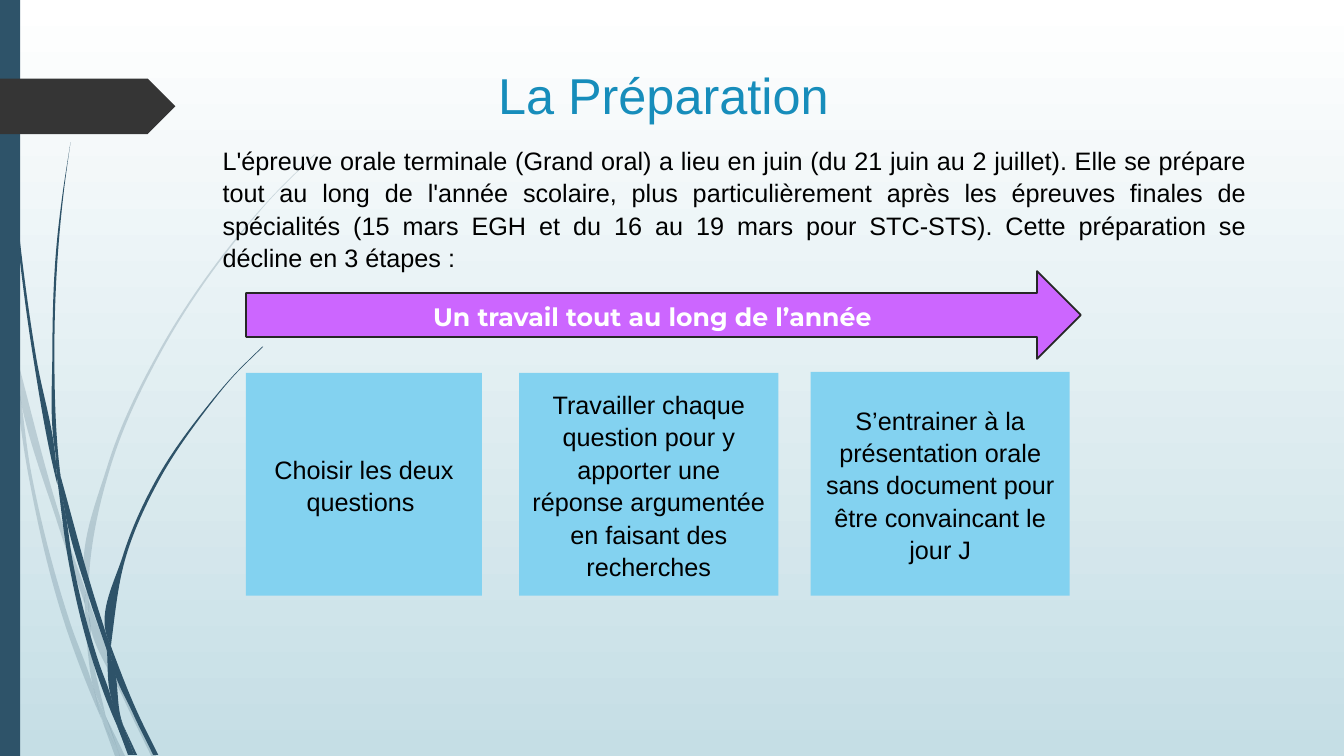
import math

from pptx import Presentation
from pptx import util as u
from pptx.dml.color import RGBColor
from pptx.enum import shapes, text
from pptx.oxml import ns
from lxml import etree

NAVY = RGBColor(0x2E, 0x53, 0x69)
CHARCOAL = RGBColor(0x35, 0x35, 0x35)
OUTLINE = RGBColor(0x27, 0x27, 0x27)
TITLE_BLUE = RGBColor(0x17, 0x8D, 0xBB)
SKY = RGBColor(0x83, 0xD2, 0xF0)
VIOLET = RGBColor(0xCC, 0x66, 0xFF)
PALE = RGBColor(0xC5, 0xDE, 0xE5)
BLACK = RGBColor(0, 0, 0)
WHITE = RGBColor(0xFF, 0xFF, 0xFF)

CELL = u.Inches(0.01)  # the slide is a grid of 1333 columns by 750 rows
COLS, ROWS = 1333, 750


def smooth(points):
    """Bezier anchors and handles, in EMU, of a curve through grid points."""
    chords = [math.dist(a, b) for a, b in zip(points, points[1:])]
    slopes = [[(v - w) / d for v, w in zip(b, a)]
              for a, b, d in zip(points, points[1:], chords)]
    tangents = [slopes[0]]
    for m, n, d, e in zip(slopes, slopes[1:], chords, chords[1:]):
        tangents.append([(v * e + w * d) / (d + e) for v, w in zip(m, n)])
    tangents.append(slopes[-1])
    curve = [points[0]]
    for i, d in enumerate(chords):
        curve.append([v + t * d / 3 for v, t in zip(points[i], tangents[i])])
        curve.append([v - t * d / 3 for v, t in zip(points[i + 1], tangents[i + 1])])
        curve.append(points[i + 1])
    return [(CELL * x, CELL * y) for x, y in curve]


def write(sp, words, align, spacing, **font):
    tf = sp.text_frame
    tf.word_wrap = True
    p = tf.paragraphs[0]
    p.alignment = align
    for name, value in spacing.items():
        setattr(p, name, value)
    r = p.add_run()
    r.text = words
    r.font.color.rgb = font.pop("color")
    for name, value in font.items():
        setattr(r.font, name, value)
    return p


prs = Presentation()
prs.slide_width, prs.slide_height = COLS * CELL, ROWS * CELL
s = prs.slides.add_slide(prs.slide_layouts[5])

# Background gradient, from top to bottom
fill = s.background.fill
fill.gradient()
fill.gradient_angle = 270
for stop, color, position in zip(fill.gradient_stops, (WHITE, PALE), (0, 1)):
    stop.color.rgb = color
    stop.position = position

# Grass blades: left and right edge of each part, from top to bottom
pale_blades = [
    ([(0, 299), (10, 344), (11, 350)], [(0, 282), (9, 322), (11, 350)]),
    ([(14, 345), (17, 376), (58, 522), (84, 599)], [(14, 345), (62, 520), (85, 586)]),
    ([(88, 596), (88, 610), (123, 694), (150, 750)], [(88, 596), (92, 607), (127, 692), (155, 750)]),
    ([(105, 711), (119, 750)], [(105, 711), (124, 750)]),
    ([(11, 350), (28, 470), (65, 621), (92, 693), (101, 714)],
     [(11, 350), (17, 376), (31, 469), (70, 619), (93, 683), (99, 707), (101, 714)]),
    ([(84, 599), (87, 646), (93, 683), (105, 711)], [(84, 599), (88, 610), (91, 646), (105, 711)]),
    ([(312, 153), (268, 197), (228, 244), (158, 348), (107, 461), (85, 584), (88, 596)],
     [(312, 154), (268, 198), (229, 245), (160, 349), (110, 462), (88, 584), (88, 596)]),
    ([(101, 714), (114, 750)], [(101, 714), (119, 750)]),
    ([(85, 586), (84, 599), (88, 608)], [(85, 586), (88, 596), (88, 610)]),
    ([(93, 683), (99, 707), (119, 750)], [(93, 683), (96, 692), (105, 711), (119, 750)]),
]
dark_blades = [
    ([(3, 0), (7, 110), (17, 233), (33, 355), (56, 477), (57, 481)],
     [(4, 0), (8, 109), (19, 232), (36, 355), (55, 453), (57, 481)]),
    ([(60, 472), (64, 505), (88, 592), (106, 645)], [(60, 472), (93, 590), (106, 631)]),
    ([(110, 641), (111, 656), (132, 708), (152, 749)], [(110, 641), (113, 649), (136, 706), (157, 749)]),
    ([(57, 477), (68, 557), (93, 659), (111, 708), (117, 722)],
     [(57, 477), (64, 505), (72, 556), (98, 657), (110, 691), (117, 722)]),
    ([(70, 141), (62, 193), (56, 245), (52, 349), (55, 449), (60, 472)],
     [(70, 141), (63, 193), (58, 245), (54, 349), (58, 453), (60, 472)]),
    ([(122, 719), (133, 749)], [(122, 719), (136, 749)]),
    ([(55, 449), (57, 477), (64, 505)], [(55, 449), (60, 472), (64, 505)]),
    ([(260, 344), (231, 373), (204, 405), (156, 474), (122, 551), (106, 631), (110, 641)],
     [(261, 344), (231, 374), (205, 406), (158, 476), (125, 552), (111, 633), (110, 641)]),
    ([(117, 722), (127, 749)], [(117, 722), (131, 749)]),
    ([(106, 645), (110, 691), (122, 719)], [(106, 645), (111, 656), (121, 716), (122, 719)]),
    ([(106, 631), (106, 645), (111, 656)], [(106, 631), (110, 641), (111, 656)]),
    ([(110, 691), (117, 722), (130, 749)], [(110, 691), (122, 719), (133, 749)]),
]
for opacity, blades in ((20, pale_blades), (100, dark_blades)):
    for left, right in blades:
        down, up = smooth(left), smooth(right)[::-1]
        outline = down + [down[-1], up[0]] + up
        builder = s.shapes.build_freeform(*outline[0], scale=1.0)
        builder.add_line_segments(outline[1:], close=True)
        sp = builder.convert_to_shape()
        sp.shadow.inherit = False
        sp.fill.solid()
        sp.fill.fore_color.rgb = NAVY
        sp.line.fill.background()
        # Every three points after the first make one Bezier segment
        lines = list(sp._element.iter(ns.qn("a:lnTo")))
        for i in range(0, len(lines) - 2, 3):
            lines[i].addprevious(bezier := etree.Element(ns.qn("a:cubicBezTo")))
            for line in lines[i:i + 3]:
                bezier.append(line[0])
                line.getparent().remove(line)
        if opacity < 100:
            clr = sp.fill._xPr.find(".//" + ns.qn("a:srgbClr"))
            etree.SubElement(clr, ns.qn("a:alpha")).set("val", str(opacity * 1000))

# Title
title = s.shapes.title
title.left, title.top, title.width, title.height = (CELL * v for v in (361, 57, 594, 74))
write(title, "La Préparation", text.PP_ALIGN.CENTER, {},
      name="Arial", size=u.Pt(36), color=TITLE_BLUE)

# Introduction
spacing = {"line_spacing": 1.07, "space_after": u.Pt(8)}
intro = s.shapes.add_textbox(*(CELL * v for v in (186, 137, 1060, 137)))
p = write(intro,
          "L'épreuve orale terminale (Grand oral) a lieu en juin (du 21 juin au 2 juillet). "
          "Elle se prépare tout au long de l'année scolaire, plus particulièrement après les "
          "épreuves finales de spécialités (15 mars EGH et du 16 au 19 mars pour STC-STS). "
          "Cette préparation se décline en 3 étapes : ",
          text.PP_ALIGN.JUSTIFY, spacing, name="Arial", size=u.Pt(18), color=BLACK)
p._p.get_or_add_pPr().set("marL", str(25 * CELL))

# Side bar, page tag, year arrow and the three steps
kinds = shapes.MSO_SHAPE
step_font = {"name": "Arial", "color": BLACK}
arrow_font = {"name": "Montserrat", "color": WHITE, "bold": True}
panels = [
    (kinds.RECTANGLE, (0, 0, 20, ROWS), NAVY, "", {}),
    (kinds.PENTAGON, (0, 78, 174, 55), CHARCOAL, "", {}),
    (kinds.RIGHT_ARROW, (244, 269, 828, 87), VIOLET,
     "Un travail tout au long de l’année", arrow_font),
    (kinds.RECTANGLE, (244, 370, 234, 221), SKY,
     "Choisir les deux questions ", step_font),
    (kinds.RECTANGLE, (515, 370, 257, 221), SKY,
     "Travailler chaque question pour y apporter une réponse argumentée "
     "en faisant des recherches", step_font),
    (kinds.RECTANGLE, (804, 369, 257, 222), SKY,
     "S’entrainer à la présentation orale sans document pour être convaincant "
     "le jour J", step_font),
]
for kind, box, color, words, font in panels:
    sp = s.shapes.add_shape(kind, *(CELL * v for v in box))
    sp.shadow.inherit = False
    sp.fill.solid()
    sp.fill.fore_color.rgb = color
    if kind == kinds.RIGHT_ARROW:
        sp.line.color.rgb = OUTLINE
        sp.line.width = u.Pt(1.25)
    else:
        sp.line.fill.background()
    if words:
        sp.text_frame.vertical_anchor = text.MSO_ANCHOR.MIDDLE
        write(sp, words, text.PP_ALIGN.CENTER, spacing, size=u.Pt(18), **font)

prs.save("out.pptx")
